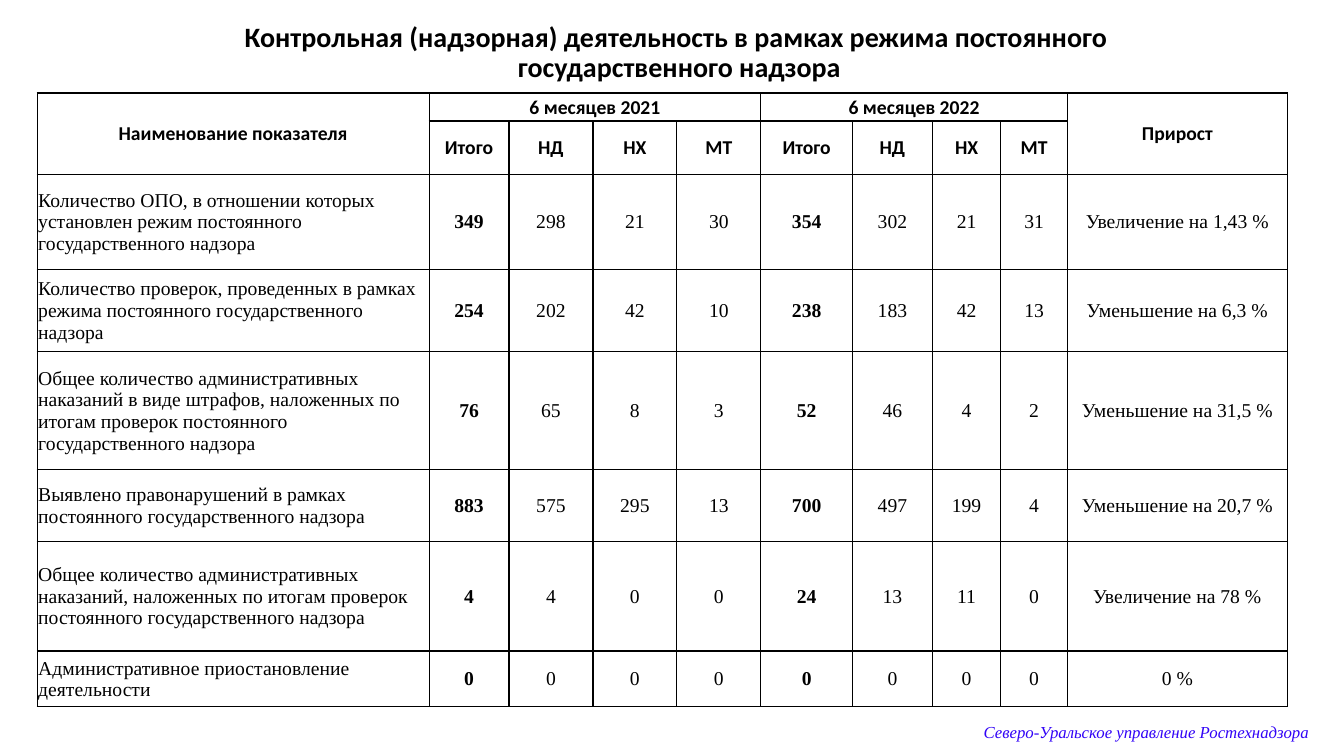
"""Builds a slide comparing supervision figures for two half-years."""
from dataclasses import dataclass

from lxml import etree
from pptx import Presentation
from pptx.dml.color import RGBColor
from pptx.enum.text import MSO_ANCHOR, PP_ALIGN
from pptx.oxml.ns import qn
from pptx.slide import Slide
from pptx.table import Table, _Cell
from pptx.text.text import TextFrame
from pptx.util import Pt

MIDDLE = MSO_ANCHOR.MIDDLE
LEFT, CENTER = PP_ALIGN.LEFT, PP_ALIGN.CENTER
BLACK = RGBColor(0x00, 0x00, 0x00)
WHITE = RGBColor(0xFF, 0xFF, 0xFF)
BLUE = RGBColor(0x31, 0x03, 0xF7)

TITLE_FONT = {"name": "Calibri", "size": Pt(20), "bold": True}
HEADER_FONT = {"name": "Calibri", "size": Pt(14), "bold": True}
BODY_FONT = {"name": "Times New Roman", "size": Pt(14), "bold": False}
TOTAL_FONT = {**BODY_FONT, "bold": True}
AGENCY_FONT = {"name": "Times New Roman", "size": Pt(12), "italic": True}
CELL_FORMAT = {
    "vertical_anchor": MIDDLE,
    "margin_left": Pt(0.72),
    "margin_right": Pt(0.72),
    "margin_top": Pt(0.72),
    "margin_bottom": Pt(0),
}
TABLE_FLAGS = {"first_row": False, "horz_banding": False}

COLUMN_WIDTHS = [280, 57, 60, 60, 60, 65.5, 57, 49, 47.5, 157.2]
ROW_HEIGHTS = [20, 38.2, 67.7, 59, 84.2, 51.1, 78.5, 39.8]
HALF_YEARS = {1: "6 месяцев 2021", 5: "6 месяцев 2022"}
SIDE_HEADERS = {0: "Наименование показателя", 9: "Прирост"}
GROUPS = ["Итого", "НД", "НХ", "МТ"]


@dataclass
class Caption:
    text: str
    left: float
    top: float
    width: float
    height: float
    font: dict
    color: RGBColor
    align: PP_ALIGN
    line_spacing: float = 1.0


@dataclass
class Indicator:
    name: str
    first_year: tuple[int, ...]
    second_year: tuple[int, ...]
    growth: str


CAPTIONS = [
    Caption(
        "Контрольная (надзорная) деятельность в рамках режима постоянного \v"
        "государственного надзора",
        51, 9.4, 868.5, 57, TITLE_FONT, BLACK, CENTER, 0.9,
    ),
    Caption(
        "Северо-Уральское управление Ростехнадзора",
        695.5, 504.7, 253.5, 36, AGENCY_FONT, BLUE, LEFT,
    ),
]

INDICATORS = [
    Indicator(
        "Количество ОПО, в отношении которых установлен режим постоянного "
        "государственного надзора",
        (349, 298, 21, 30), (354, 302, 21, 31), "Увеличение на 1,43 %",
    ),
    Indicator(
        "Количество проверок, проведенных в рамках режима постоянного "
        "государственного надзора",
        (254, 202, 42, 10), (238, 183, 42, 13), "Уменьшение на 6,3 %",
    ),
    Indicator(
        "Общее количество административных наказаний в виде штрафов, "
        "наложенных по итогам проверок постоянного государственного надзора",
        (76, 65, 8, 3), (52, 46, 4, 2), "Уменьшение на 31,5 %",
    ),
    Indicator(
        "Выявлено правонарушений в рамках постоянного государственного надзора",
        (883, 575, 295, 13), (700, 497, 199, 4), "Уменьшение на 20,7 %",
    ),
    Indicator(
        "Общее количество административных наказаний, наложенных по итогам "
        "проверок постоянного государственного надзора",
        (4, 4, 0, 0), (24, 13, 11, 0), "Увеличение на 78 %",
    ),
    Indicator(
        "Административное приостановление деятельности",
        (0, 0, 0, 0), (0, 0, 0, 0), "0 %",
    ),
]


def apply_format(target: object, values: dict) -> None:
    for attribute, value in values.items():
        setattr(target, attribute, value)


def write(frame: TextFrame, text: str, font: dict, color: RGBColor,
          align: PP_ALIGN, line_spacing: float = 1.0) -> None:
    paragraph = frame.paragraphs[0]
    paragraph.text = text
    apply_format(paragraph, {"alignment": align, "line_spacing": line_spacing})
    for run in paragraph.runs:
        apply_format(run.font, font)
        run.font.color.rgb = color


def add_caption(slide: Slide, caption: Caption) -> None:
    bounds = (caption.left, caption.top, caption.width, caption.height)
    frame = slide.shapes.add_textbox(*map(Pt, bounds)).text_frame
    apply_format(frame, {"word_wrap": True, "vertical_anchor": MIDDLE})
    write(frame, caption.text, caption.font, caption.color, caption.align,
          caption.line_spacing)


def style_cell(cell: _Cell) -> None:
    apply_format(cell, CELL_FORMAT)
    properties = cell._tc.get_or_add_tcPr()
    for side in ("a:lnL", "a:lnR", "a:lnT", "a:lnB"):
        border = etree.SubElement(properties, qn(side), w=str(Pt(1)))
        fill = etree.SubElement(border, qn("a:solidFill"))
        etree.SubElement(fill, qn("a:srgbClr"), val=str(BLACK))
    cell.fill.solid()
    cell.fill.fore_color.rgb = WHITE


def fill_header(table: Table) -> None:
    for column, text in SIDE_HEADERS.items():
        table.cell(0, column).merge(table.cell(1, column))
        write(table.cell(0, column).text_frame, text, HEADER_FONT, BLACK, CENTER)
    for start, text in HALF_YEARS.items():
        table.cell(0, start).merge(table.cell(0, start + len(GROUPS) - 1))
        write(table.cell(0, start).text_frame, text, HEADER_FONT, BLACK, CENTER)
        for column, group in enumerate(GROUPS, start):
            write(table.cell(1, column).text_frame, group, HEADER_FONT, BLACK, CENTER)


def fill_indicator(table: Table, row: int, indicator: Indicator) -> None:
    values = [indicator.name, *indicator.first_year, *indicator.second_year,
              indicator.growth]
    for column, value in enumerate(values):
        font = TOTAL_FONT if column in HALF_YEARS else BODY_FONT
        align = CENTER if column else LEFT
        write(table.cell(row, column).text_frame, str(value), font, BLACK, align)


def add_indicator_table(slide: Slide) -> None:
    table = slide.shapes.add_table(
        len(ROW_HEIGHTS), len(COLUMN_WIDTHS), Pt(26.6), Pt(66.4),
        Pt(sum(COLUMN_WIDTHS)), Pt(sum(ROW_HEIGHTS)),
    ).table
    apply_format(table, TABLE_FLAGS)
    for column, width in zip(table.columns, COLUMN_WIDTHS):
        column.width = Pt(width)
    for row, height in zip(table.rows, ROW_HEIGHTS):
        row.height = Pt(height)
    for cell in table.iter_cells():
        style_cell(cell)
    fill_header(table)
    for row, indicator in enumerate(INDICATORS, 2):
        fill_indicator(table, row, indicator)


def main() -> None:
    presentation = Presentation()
    apply_format(presentation, {"slide_width": Pt(960), "slide_height": Pt(540)})
    slide = presentation.slides.add_slide(presentation.slide_layouts[6])
    for caption in CAPTIONS:
        add_caption(slide, caption)
    add_indicator_table(slide)
    presentation.save("out.pptx")


if __name__ == "__main__":
    main()
